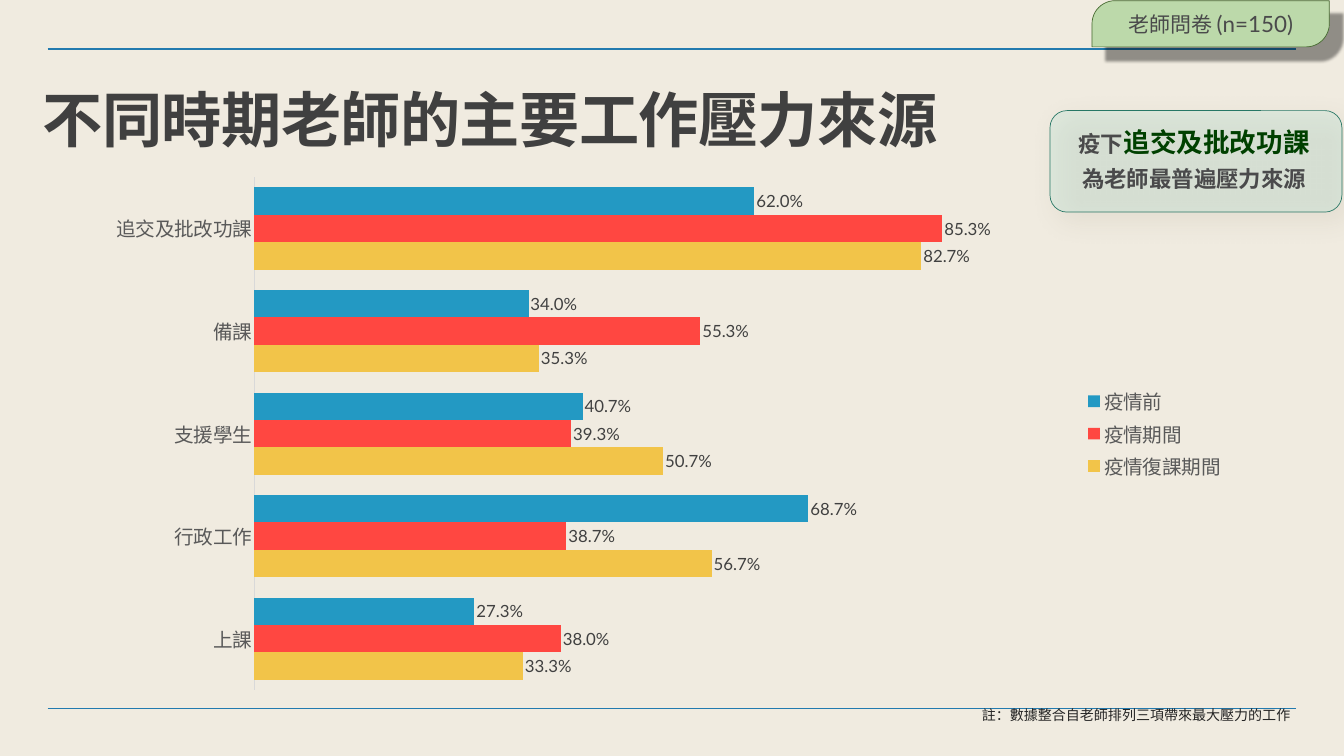
"""Build the slide on teachers' main sources of work stress."""
from lxml.etree import SubElement
from pptx import Presentation
from pptx.chart.data import CategoryChartData
from pptx.dml.color import RGBColor
from pptx.enum.chart import XL_CHART_TYPE, XL_LABEL_POSITION, XL_LEGEND_POSITION, XL_TICK_LABEL_POSITION, XL_TICK_MARK
from pptx.enum.shapes import MSO_CONNECTOR, MSO_SHAPE
from pptx.enum.text import MSO_ANCHOR, MSO_AUTO_SIZE, PP_ALIGN
from pptx.oxml import parse_xml
from pptx.oxml.ns import nsdecls, qn
from pptx.util import Pt

PAPER = RGBColor(0xF0, 0xEB, 0xE0)
RULE = RGBColor(0x22, 0x7A, 0xAF)
TITLE = RGBColor(0x40, 0x40, 0x40)
AXIS_TEXT = RGBColor(0x59, 0x59, 0x59)
AXIS_LINE = RGBColor(0xD9, 0xD9, 0xD9)
BODY = RGBColor(0x4A, 0x4A, 0x4B)
EMPHASIS = RGBColor(0x00, 0x40, 0x00)
NOTE = RGBColor(0x25, 0x25, 0x25)
TAG_FILL = RGBColor(0xBC, 0xD9, 0xAA)
TAG_LINE = RGBColor(0x46, 0x69, 0x30)
CALLOUT_FILL = RGBColor(0xA7, 0xE2, 0xD5)
CALLOUT_LINE = RGBColor(0x27, 0x77, 0x65)
TAG_SHADOW = RGBColor(0x00, 0x00, 0x00)
CALLOUT_SHADOW = RGBColor(0x4E, 0x42, 0x26)
YELLOW = RGBColor(0xF2, 0xC4, 0x49)
RED = RGBColor(0xFF, 0x47, 0x41)
BLUE = RGBColor(0x23, 0x99, 0xC3)

FONT = "Lato"
CATEGORIES = ["上課", "行政工作", "支援學生", "備課", "追交及批改功課"]
SERIES = [
    ("疫情復課期間", YELLOW, [0.333, 0.567, 0.507, 0.353, 0.827]),
    ("疫情期間", RED, [0.38, 0.387, 0.393, 0.553, 0.853]),
    ("疫情前", BLUE, [0.273, 0.687, 0.407, 0.34, 0.62]),
]


def style_font(font, size, color, name=FONT, bold=False):
    """Set the face, size, colour and weight of a font."""
    font.name, font.size, font.bold = name, Pt(size), bold
    font.color.rgb = color


def add_rule(slide, y, width):
    """Draw a horizontal line across the slide."""
    ln = slide.shapes.add_connector(MSO_CONNECTOR.STRAIGHT, Pt(68), Pt(y), Pt(1852), Pt(y))
    ln.line.color.rgb, ln.line.width = RULE, Pt(width)
    SubElement(ln._element.spPr, qn("a:effectLst"))


def fill_text(sp, paragraphs, anchor=MSO_ANCHOR.MIDDLE, align=PP_ALIGN.CENTER, before=0, wrap=True):
    """Write paragraphs, each a list of (text, size, colour, bold) runs."""
    tf = sp.text_frame
    tf.word_wrap, tf.vertical_anchor = wrap, anchor
    tf.margin_left = tf.margin_right = tf.margin_top = tf.margin_bottom = Pt(4)
    for i, runs in enumerate(paragraphs):
        p = tf.add_paragraph() if i else tf.paragraphs[0]
        p.alignment, p.space_before = align, Pt(before)
        for text, size, color, bold in runs:
            r = p.add_run()
            r.text = text
            style_font(r.font, size, color, bold=bold)


def add_text(slide, box, paragraphs, **options):
    """Add a text box with formatted paragraphs."""
    sp = slide.shapes.add_textbox(*map(Pt, box))
    fill_text(sp, paragraphs, **options)
    return sp


def add_panel(slide, kind, box, fill, line):
    """Add a filled and outlined preset shape."""
    sp = slide.shapes.add_shape(kind, *map(Pt, box))
    sp.shadow.inherit = False
    sp.fill.solid()
    sp.fill.fore_color.rgb = fill
    sp.line.color.rgb, sp.line.width = line, Pt(1)
    return sp


def add_shadow(sp, color, alpha, blur, dist):
    """Cast a soft shadow to the lower right."""
    effects = sp._element.spPr.find(qn("a:effectLst"))
    effects.append(parse_xml(
        f'<a:outerShdw {nsdecls("a")} blurRad="{Pt(blur)}" dist="{Pt(dist)}" dir="2700000" '
        f'algn="tl" rotWithShape="0"><a:srgbClr val="{color}">'
        f'<a:alpha val="{alpha * 1000}"/></a:srgbClr></a:outerShdw>'))


def add_title(slide, text):
    """Add the slide heading."""
    sp = add_text(slide, (57, 134, 1648, 254), [[(text, 86, TITLE, True)]],
                  anchor=MSO_ANCHOR.TOP, align=PP_ALIGN.LEFT)
    p = sp.text_frame.paragraphs[0]
    p.line_spacing = 0.8
    p.runs[0].font.name = "Arial"
    p.runs[0].font._element.set("spc", "-90")


def set_plot_layout(chart, x, y, w, h):
    """Fix the inner plot area as fractions of the chart."""
    plot_area = chart._chartSpace.chart.plotArea
    for old in plot_area.findall(qn("c:layout")):
        plot_area.remove(old)
    sizes = "".join(f'<c:{k} val="{v}"/>' for k, v in zip("xywh", (x, y, w, h)))
    plot_area.insert(0, parse_xml(
        f'<c:layout {nsdecls("c")}><c:manualLayout><c:layoutTarget val="inner"/>'
        f'<c:xMode val="edge"/><c:yMode val="edge"/>{sizes}</c:manualLayout></c:layout>'))


def add_stress_chart(slide):
    """Add the clustered bars of stress sources by period."""
    data = CategoryChartData(number_format="0.0%")
    data.categories = CATEGORIES
    for name, _, values in SERIES:
        data.add_series(name, values)
    box = map(Pt, (136, 238, 1623, 763))
    chart = slide.shapes.add_chart(XL_CHART_TYPE.BAR_CLUSTERED, *box, data).chart
    chart.has_title = False
    style_font(chart.font, 24, TITLE)
    set_plot_layout(chart, 0.14, 0.02, 0.71, 0.96)

    plot = chart.plots[0]
    plot.gap_width, plot.overlap, plot.vary_by_categories = 75, 0, False
    for series, (_, color, _) in zip(plot.series, SERIES):
        series.format.fill.solid()
        series.format.fill.fore_color.rgb = color
        labels = series.data_labels
        labels.show_value = True
        labels.number_format, labels.number_format_is_linked = "0.0%", False
        labels.position = XL_LABEL_POSITION.OUTSIDE_END
        style_font(labels.font, 24, TITLE)

    axis = chart.category_axis
    axis.major_tick_mark = axis.minor_tick_mark = XL_TICK_MARK.NONE
    axis.tick_label_position = XL_TICK_LABEL_POSITION.NEXT_TO_AXIS
    axis.format.line.color.rgb, axis.format.line.width = AXIS_LINE, Pt(0.75)
    style_font(axis.tick_labels.font, 28, AXIS_TEXT)
    values = chart.value_axis
    values.minimum_scale, values.maximum_scale = 0, 1
    values.has_major_gridlines = values.visible = False

    chart.has_legend = True
    chart.legend.position = XL_LEGEND_POSITION.RIGHT
    chart.legend.include_in_layout = False
    style_font(chart.legend.font, 28, AXIS_TEXT)


def add_sample_tag(slide):
    """Add the survey tag in the top right corner."""
    sp = add_panel(slide, MSO_SHAPE.ROUND_2_DIAG_RECTANGLE, (1560, 1, 339, 66), TAG_FILL, TAG_LINE)
    sp.adjustments[0], sp.adjustments[1] = 0.5, 0
    add_shadow(sp, TAG_SHADOW, 40, 4, 27)
    fill_text(sp, [[("老師問卷 ", 30, BODY, False), ("(n=150)", 32, BODY, False)]])


def add_callout(slide):
    """Add the key finding on a translucent panel."""
    sp = add_panel(slide, MSO_SHAPE.ROUNDED_RECTANGLE, (1500, 158, 417, 145), CALLOUT_FILL, CALLOUT_LINE)
    color = sp._element.spPr.find(qn("a:solidFill"))[0]
    SubElement(color, qn("a:alpha"), val="23000")
    add_shadow(sp, CALLOUT_SHADOW, 30, 37, 16)
    add_text(slide, (1513, 171, 386, 113), [
        [("疫下", 32, BODY, True), ("追交及批改功課", 38, EMPHASIS, True)],
        [("為老師最普遍壓力來源", 32, BODY, True)],
    ], before=10)


def main():
    """Assemble and save the slide."""
    prs = Presentation()
    prs.slide_width, prs.slide_height = Pt(1920), Pt(1080)
    s = prs.slides.add_slide(prs.slide_layouts[6])
    s.background.fill.solid()
    s.background.fill.fore_color.rgb = PAPER
    add_rule(s, 70, 4)
    add_rule(s, 1012, 1)
    add_title(s, "不同時期老師的主要工作壓力來源")
    add_stress_chart(s)
    add_sample_tag(s)
    add_callout(s)
    note = add_text(s, (1397, 1001, 452, 42), [[("註：數據整合自老師排列三項帶來最大壓力的工作", 20, NOTE, False)]],
                    before=10, wrap=False)
    note.text_frame.auto_size = MSO_AUTO_SIZE.SHAPE_TO_FIT_TEXT
    prs.save("out.pptx")


if __name__ == "__main__":
    main()
